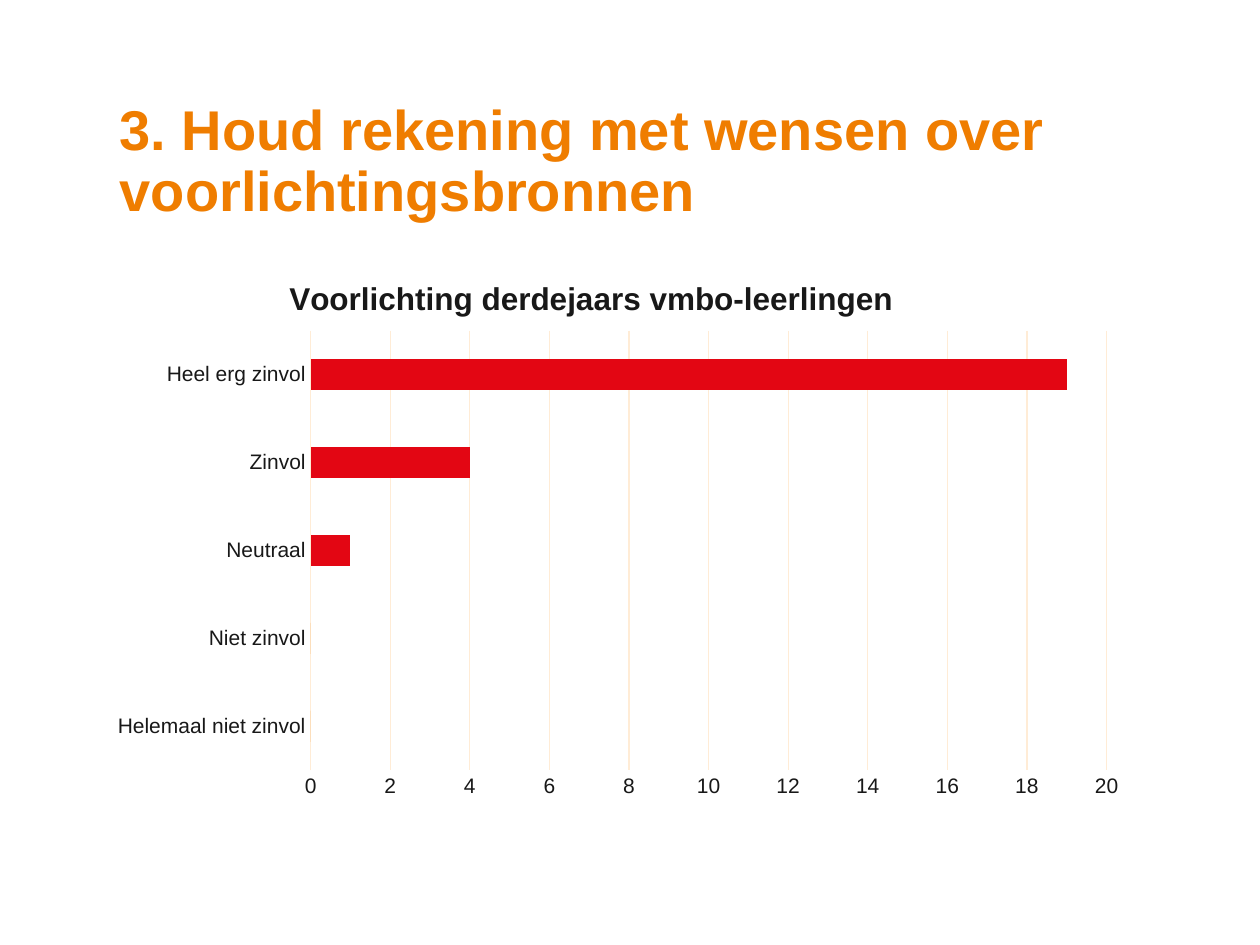
import pptx
import pptx.chart.data
import pptx.dml.color
import pptx.enum.chart
import pptx.enum.text
import pptx.oxml
import pptx.oxml.ns
import pptx.util

Pt = pptx.util.Pt
FONT = "Arial"
COLORS = {
    "orange": "EF7D00",
    "red": "E30613",
    "text": "181818",
    "grid": "FFECD6",
}
RATINGS = {
    "Helemaal niet zinvol": 0,
    "Niet zinvol": 0,
    "Neutraal": 1,
    "Zinvol": 4,
    "Heel erg zinvol": 19,
}


def color(name):
    return pptx.dml.color.RGBColor.from_string(COLORS[name])


def set_attributes(target, values):
    for name, value in values.items():
        setattr(target, name, value)


def format_font(font, size, color_name, bold=False):
    set_attributes(font, {"name": FONT, "size": Pt(size), "bold": bold})
    font.color.rgb = color(color_name)


def format_line(line):
    line.color.rgb = color("grid")
    line.width = Pt(0.75)


def manual_layout(**fractions):
    """Return a chart layout placed by fractions of the chart area."""
    target = '<c:layoutTarget val="inner"/>' if "w" in fractions else ""
    modes = "".join(f'<c:{key}Mode val="edge"/>' for key in ("x", "y"))
    sizes = "".join(f'<c:{key} val="{value}"/>' for key, value in fractions.items())
    return pptx.oxml.parse_xml(
        f'<c:layout {pptx.oxml.ns.nsdecls("c")}><c:manualLayout>'
        f"{target}{modes}{sizes}</c:manualLayout></c:layout>"
    )


def replace_layout(parent, layout, position):
    for old in parent.findall(pptx.oxml.ns.qn("c:layout")):
        parent.remove(old)
    parent.insert(position, layout)


def add_title(slide, text):
    title = slide.shapes.title
    set_attributes(title, {
        "left": Pt(61.2), "top": Pt(41), "width": Pt(620.6), "height": Pt(104.4),
    })
    frame = title.text_frame
    set_attributes(frame, {
        "text": text,
        "word_wrap": True,
        "auto_size": pptx.enum.text.MSO_AUTO_SIZE.NONE,
        "vertical_anchor": pptx.enum.text.MSO_ANCHOR.MIDDLE,
    })
    paragraph = frame.paragraphs[0]
    set_attributes(paragraph, {
        "alignment": pptx.enum.text.PP_ALIGN.LEFT, "line_spacing": 0.9,
    })
    format_font(paragraph.runs[0].font, 32, "orange", bold=True)


def format_axes(chart):
    for axis in (chart.category_axis, chart.value_axis):
        set_attributes(axis, {
            "major_tick_mark": pptx.enum.chart.XL_TICK_MARK.NONE,
            "minor_tick_mark": pptx.enum.chart.XL_TICK_MARK.NONE,
        })
        format_font(axis.tick_labels.font, 12, "text")
    format_line(chart.category_axis.format.line)
    set_attributes(chart.value_axis, {
        "minimum_scale": 0, "maximum_scale": 20, "major_unit": 2,
        "has_major_gridlines": True,
    })
    chart.value_axis.format.line.fill.background()
    format_line(chart.value_axis.major_gridlines.format.line)


def add_bar_chart(slide, title, ratings):
    data = pptx.chart.data.CategoryChartData()
    data.categories = list(ratings)
    data.add_series("Series 1", list(ratings.values()))
    chart = slide.shapes.add_chart(
        pptx.enum.chart.XL_CHART_TYPE.BAR_CLUSTERED,
        Pt(13.7), Pt(142.6), Pt(645.1), Pt(319.7), data,
    ).chart
    chart.has_legend = False
    format_font(chart.font, 10, "text")
    format_axes(chart)

    # Chart title
    chart.has_title = True
    frame = chart.chart_title.text_frame
    frame.text = title
    format_font(frame.paragraphs[0].runs[0].font, 18, "text", bold=True)
    chart.chart_title.include_in_layout = False
    replace_layout(frame._txBody.getparent().getparent(), manual_layout(x=0.23, y=0.04), 1)

    # Bars: the answers that were given stand out in red
    plot = chart.plots[0]
    set_attributes(plot, {"gap_width": 182, "vary_by_categories": False})
    series = plot.series[0]
    series.format.fill.solid()
    series.format.fill.fore_color.rgb = color("orange")
    for index, value in enumerate(ratings.values()):
        if value:
            fill = series.points[index].format.fill
            fill.solid()
            fill.fore_color.rgb = color("red")

    # Plot area
    plot_area = chart.element.find(".//" + pptx.oxml.ns.qn("c:plotArea"))
    replace_layout(plot_area, manual_layout(x=0.254, y=0.145, w=0.705, h=0.786), 0)


def main():
    presentation = pptx.Presentation()
    set_attributes(presentation, {"slide_width": Pt(720), "slide_height": Pt(540)})
    slide = presentation.slides.add_slide(presentation.slide_layouts[5])
    add_title(slide, "3. Houd rekening met wensen over voorlichtingsbronnen")
    add_bar_chart(slide, "Voorlichting derdejaars vmbo-leerlingen", RATINGS)
    presentation.save("out.pptx")


if __name__ == "__main__":
    main()
